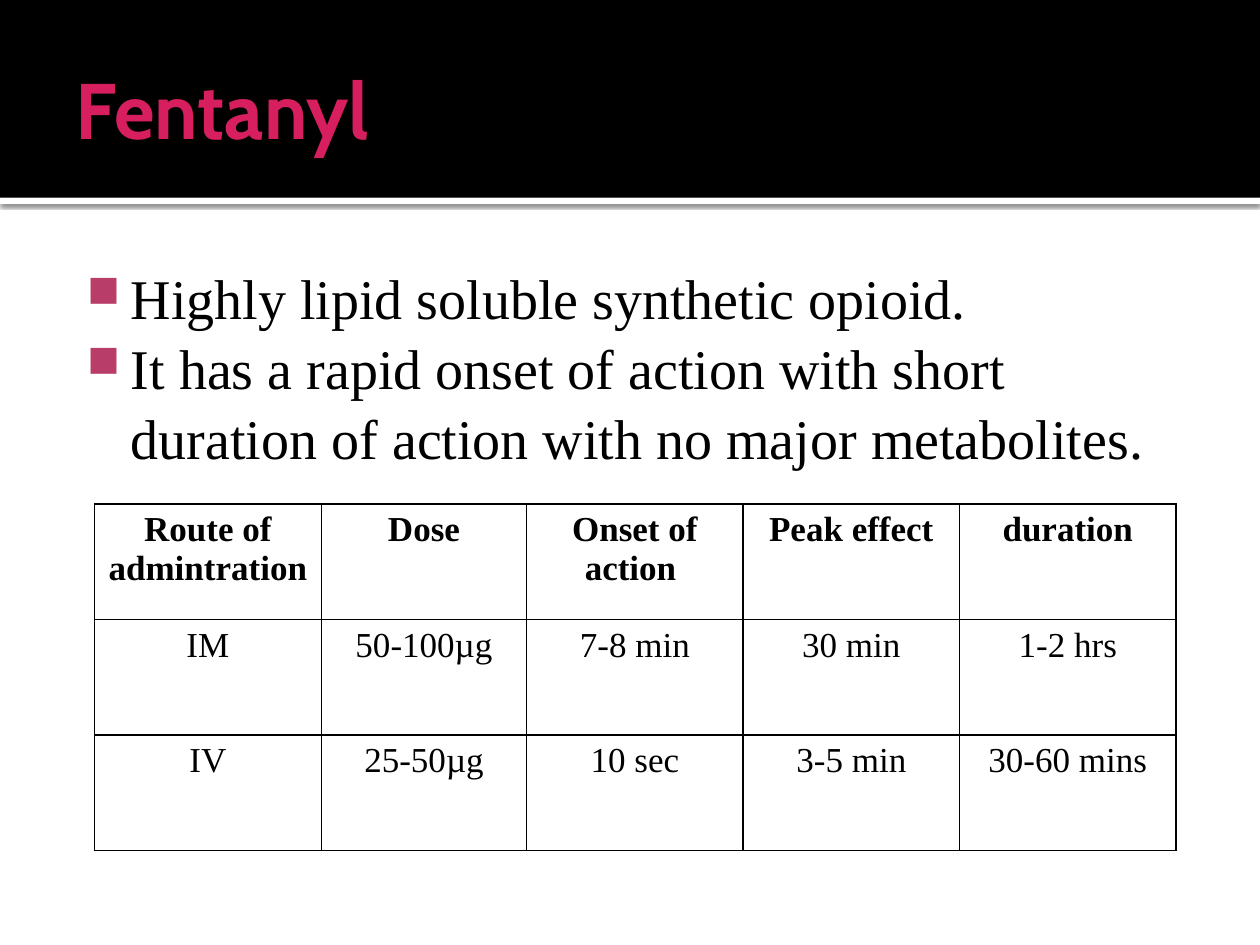
from dataclasses import dataclass
from typing import Any, NamedTuple

from lxml import etree
from pptx import Presentation
from pptx.dml.color import RGBColor
from pptx.enum.shapes import MSO_SHAPE
from pptx.enum.text import MSO_ANCHOR, PP_ALIGN
from pptx.oxml import parse_xml
from pptx.oxml.ns import nsdecls, qn
from pptx.util import Pt

RECT = MSO_SHAPE.RECTANGLE
MIDDLE, TOP = MSO_ANCHOR.MIDDLE, MSO_ANCHOR.TOP
LEFT, CENTER = PP_ALIGN.LEFT, PP_ALIGN.CENTER


@dataclass(frozen=True)
class Theme:
    ink: str = "000000"
    paper: str = "FFFFFF"
    accent: str = "D71E5F"
    bullet: str = "B83D68"
    head: str = "Cabin"
    serif: str = "Times New Roman"
    title: float = 45
    body: float = 32
    cell: float = 20


class Box(NamedTuple):
    left: float
    top: float
    width: float
    height: float

    def place(self) -> tuple:
        return tuple(Pt(n) for n in self)


class Band(NamedTuple):
    box: Box
    color: str
    shadow: bool


THEME = Theme()
BANDS = [
    Band(Box(0, 113, 720, 3.6), THEME.paper, True),
    Band(Box(0, 0, 720, 113), THEME.ink, False),
]
TITLE = Box(36, 12.24, 648, 98.64)
BODY = Box(36, 139.68, 648, 364.32)
GRID = Box(54, 288, 618, 198)
COLS = [129.6, 117.4, 123.7, 123.7, 123.7]
POINTS = [
    "Highly lipid soluble synthetic opioid.",
    "It has a rapid onset of action with short duration of action "
    "with no major metabolites.",
]
ROWS = [
    ["Route of admintration ", "Dose", "Onset of action ", "Peak effect", "duration"],
    ["IM", "50-100µg", "7-8 min", "30 min", "1-2 hrs"],
    ["IV", "25-50µg", "10 sec", "3-5 min", "30-60 mins"],
]


def apply(item: Any, form: dict) -> None:
    for name, value in form.items():
        setattr(item, name, value)


def write(para: Any, text: str, face: str, size: float, color: str,
          bold: bool = False, align: Any = LEFT) -> None:
    para.alignment = align
    run = para.add_run()
    run.text = text
    apply(run.font, {"name": face, "size": Pt(size), "bold": bold})
    run.font.color.rgb = RGBColor.from_string(color)


def inset(frame: Any, left: float, top: float, right: float, base: float) -> None:
    apply(frame, {
        "margin_left": Pt(left), "margin_top": Pt(top),
        "margin_right": Pt(right), "margin_bottom": Pt(base),
        "word_wrap": True,
    })


def draw_band(slide: Any, band: Band, depth: int) -> None:
    """Draw a full-width band behind the title, at the given depth."""
    shape = slide.shapes.add_shape(RECT, *band.box.place())
    shape.fill.solid()
    shape.fill.fore_color.rgb = RGBColor.from_string(band.color)
    shape.line.fill.background()
    shape.shadow.inherit = False
    if band.shadow:
        effect = shape._element.spPr.find(qn("a:effectLst"))
        effect.append(parse_xml(
            f'<a:outerShdw {nsdecls("a")} blurRad="{Pt(2.5)}" dist="{Pt(0.8)}" '
            f'dir="5400000"><a:srgbClr val="{THEME.ink}">'
            '<a:alpha val="60000"/></a:srgbClr></a:outerShdw>'))
    slide.shapes._spTree.insert(2 + depth, shape._element)


def draw_title(slide: Any, text: str) -> None:
    shape = slide.shapes.title
    apply(shape, dict(zip(("left", "top", "width", "height"), TITLE.place())))
    frame = shape.text_frame
    inset(frame, 7.2, 3.6, 3.6, 3.6)
    frame.vertical_anchor = MIDDLE
    write(frame.paragraphs[0], text, THEME.head, THEME.title, THEME.accent, True)


def add_bullet(para: Any) -> None:
    props = para._p.get_or_add_pPr()
    props.set("marL", str(Pt(34.56)))
    props.set("indent", str(Pt(-25.2)))
    color = etree.SubElement(props, qn("a:buClr"))
    etree.SubElement(color, qn("a:srgbClr"), val=THEME.bullet)
    etree.SubElement(props, qn("a:buSzPct"), val="80000")
    etree.SubElement(props, qn("a:buChar"), char="■")


def draw_body(slide: Any, points: list[str]) -> None:
    frame = slide.shapes.add_textbox(*BODY.place()).text_frame
    inset(frame, 4.32, 9.5, 7.2, 3.6)
    frame.vertical_anchor = TOP
    for i, text in enumerate(points):
        para = frame.add_paragraph() if i else frame.paragraphs[0]
        write(para, text, THEME.serif, THEME.body, THEME.ink)
        para.line_spacing = 1.04
        add_bullet(para)


def add_border(cell: Any) -> None:
    props = cell._tc.get_or_add_tcPr()
    for i, side in enumerate(("lnL", "lnR", "lnT", "lnB")):
        props.insert(i, parse_xml(
            f'<a:{side} {nsdecls("a")} w="{Pt(1)}"><a:solidFill>'
            f'<a:srgbClr val="{THEME.ink}"/></a:solidFill></a:{side}>'))


def draw_table(slide: Any, rows: list[list[str]]) -> None:
    table = slide.shapes.add_table(len(rows), len(COLS), *GRID.place()).table
    apply(table, {"first_row": False, "horz_banding": False})
    for col, width in zip(table.columns, COLS):
        col.width = Pt(width)
    for r, row in enumerate(rows):
        table.rows[r].height = Pt(GRID.height / len(rows))
        for c, text in enumerate(row):
            cell = table.cell(r, c)
            cell.fill.background()
            add_border(cell)
            write(cell.text_frame.paragraphs[0], text, THEME.serif,
                  THEME.cell, THEME.ink, r == 0, CENTER)


def main() -> None:
    deck = Presentation()
    apply(deck, {"slide_width": Pt(720), "slide_height": Pt(540)})
    slide = deck.slides.add_slide(deck.slide_layouts[5])
    for depth, band in enumerate(BANDS):
        draw_band(slide, band, depth)
    draw_title(slide, "Fentanyl")
    draw_body(slide, POINTS)
    draw_table(slide, ROWS)
    deck.save("out.pptx")


if __name__ == "__main__":
    main()
